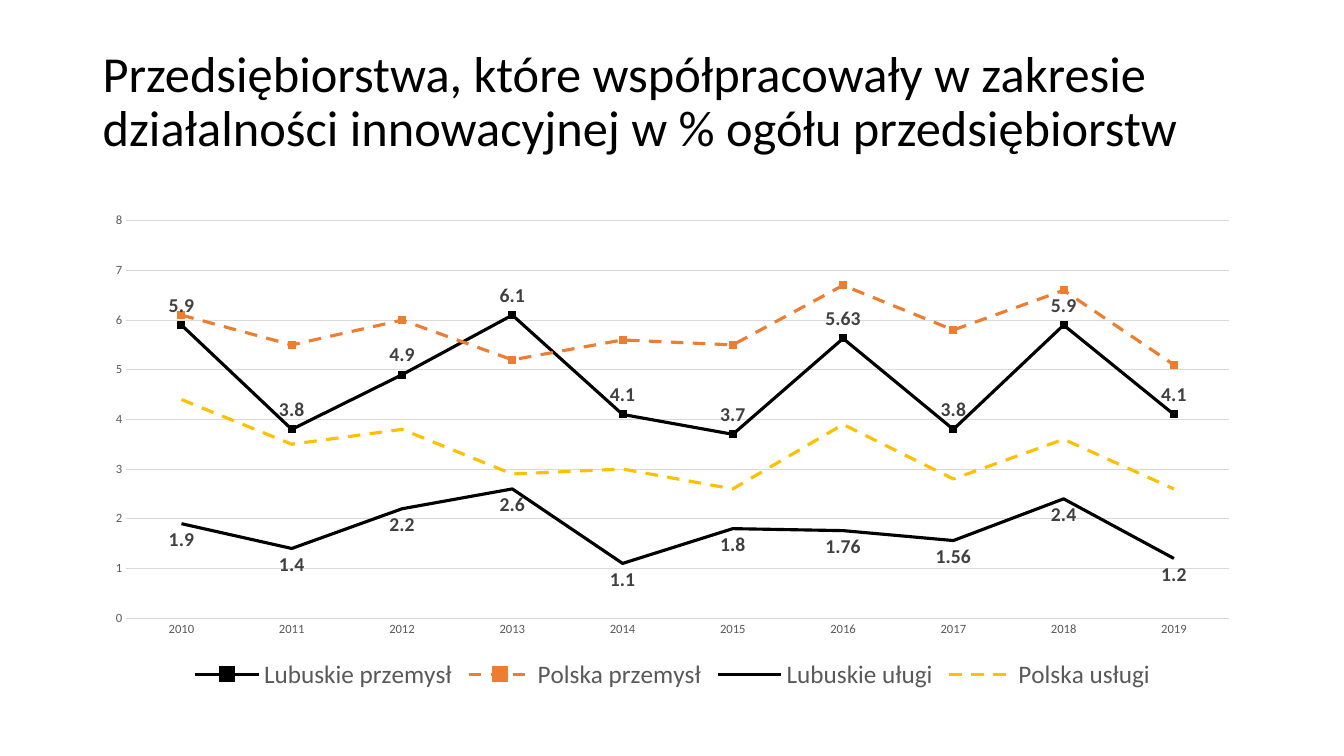
from pptx import Presentation
from pptx.chart.data import CategoryChartData
from pptx.dml.color import RGBColor
from pptx.enum.chart import (
    XL_CHART_TYPE as ChartType,
    XL_LABEL_POSITION as LabelPosition,
    XL_LEGEND_POSITION as LegendPosition,
    XL_MARKER_STYLE as MarkerStyle,
    XL_TICK_MARK as TickMark,
)
from pptx.enum.dml import MSO_LINE
from pptx.enum.text import MSO_ANCHOR
from pptx.util import Inches, Pt

FONT = "Calibri"
COLORS = {
    "black": "000000",
    "orange": "ED7D31",
    "yellow": "FFC000",
    "grid": "D9D9D9",
    "axis_text": "595959",
    "label_text": "404040",
}
TITLE = ("Przedsiębiorstwa, które współpracowały w zakresie działalności "
         "innowacyjnej w % ogółu przedsiębiorstw")
YEARS = [str(year) for year in range(2010, 2020)]

# Name, values, colour, dashed line, square markers, label position
SERIES = [
    ("Lubuskie przemysł", (5.9, 3.8, 4.9, 6.1, 4.1, 3.7, 5.63, 3.8, 5.9, 4.1),
     "black", False, True, LabelPosition.ABOVE),
    ("Polska przemysł", (6.1, 5.5, 6, 5.2, 5.6, 5.5, 6.7, 5.8, 6.6, 5.1),
     "orange", True, True, None),
    ("Lubuskie uługi", (1.9, 1.4, 2.2, 2.6, 1.1, 1.8, 1.76, 1.56, 2.4, 1.2),
     "black", False, False, LabelPosition.BELOW),
    ("Polska usługi", (4.4, 3.5, 3.8, 2.9, 3, 2.6, 3.9, 2.8, 3.6, 2.6),
     "yellow", True, False, None),
]


def rgb(name):
    return RGBColor.from_string(COLORS[name])


def set_font(font, size, color, bold=False):
    font.name = FONT
    font.size = Pt(size)
    font.bold = bold
    font.color.rgb = rgb(color)


def set_line(line, color, width):
    line.color.rgb = rgb(color)
    line.width = Pt(width)


def add_title(slide):
    box = slide.shapes.add_textbox(Inches(0.92), Inches(0.2), Inches(11.5), Inches(1.65))
    frame = box.text_frame
    frame.word_wrap = True
    frame.vertical_anchor = MSO_ANCHOR.MIDDLE
    paragraph = frame.paragraphs[0]
    paragraph.text = TITLE
    paragraph.line_spacing = 0.9
    set_font(paragraph.font, 36, "black")


def style_series(series, color, dashed, markers, label_position):
    series.smooth = False
    set_line(series.format.line, color, 2.25)
    if dashed:
        series.format.line.dash_style = MSO_LINE.DASH

    marker = series.marker
    if markers:
        marker.style = MarkerStyle.SQUARE
        marker.size = 5
        marker.format.fill.solid()
        marker.format.fill.fore_color.rgb = rgb(color)
        set_line(marker.format.line, color, 0.75)
    else:
        marker.style = MarkerStyle.NONE

    if label_position is not None:
        labels = series.data_labels
        labels.show_value = True
        labels.position = label_position
        set_font(labels.font, 14, "label_text", bold=True)


def style_axes(chart):
    for axis in (chart.category_axis, chart.value_axis):
        axis.major_tick_mark = TickMark.NONE
        axis.minor_tick_mark = TickMark.NONE
        set_font(axis.tick_labels.font, 9, "axis_text")
    set_line(chart.category_axis.format.line, "grid", 0.75)

    value_axis = chart.value_axis
    value_axis.minimum_scale = 0
    value_axis.maximum_scale = 8
    value_axis.major_unit = 1
    value_axis.format.line.fill.background()
    set_line(value_axis.major_gridlines.format.line, "grid", 0.75)


def add_line_chart(slide):
    data = CategoryChartData()
    data.categories = YEARS
    for name, values, *_ in SERIES:
        data.add_series(name, values)
    chart = slide.shapes.add_chart(
        ChartType.LINE_MARKERS, Inches(0.92), Inches(2.02),
        Inches(11.5), Inches(4.87), data).chart
    chart.has_title = False
    set_font(chart.font, 10, "black")
    chart.plots[0].vary_by_categories = False

    for series, (_, _, *style) in zip(chart.plots[0].series, SERIES):
        style_series(series, *style)
    style_axes(chart)

    # Legend
    chart.has_legend = True
    chart.legend.position = LegendPosition.BOTTOM
    chart.legend.include_in_layout = False
    set_font(chart.legend.font, 18, "axis_text")


def main():
    presentation = Presentation()
    presentation.slide_width = Inches(13.33)
    presentation.slide_height = Inches(7.5)
    slide = presentation.slides.add_slide(presentation.slide_layouts[6])
    add_title(slide)
    add_line_chart(slide)
    presentation.save("out.pptx")


if __name__ == "__main__":
    main()
